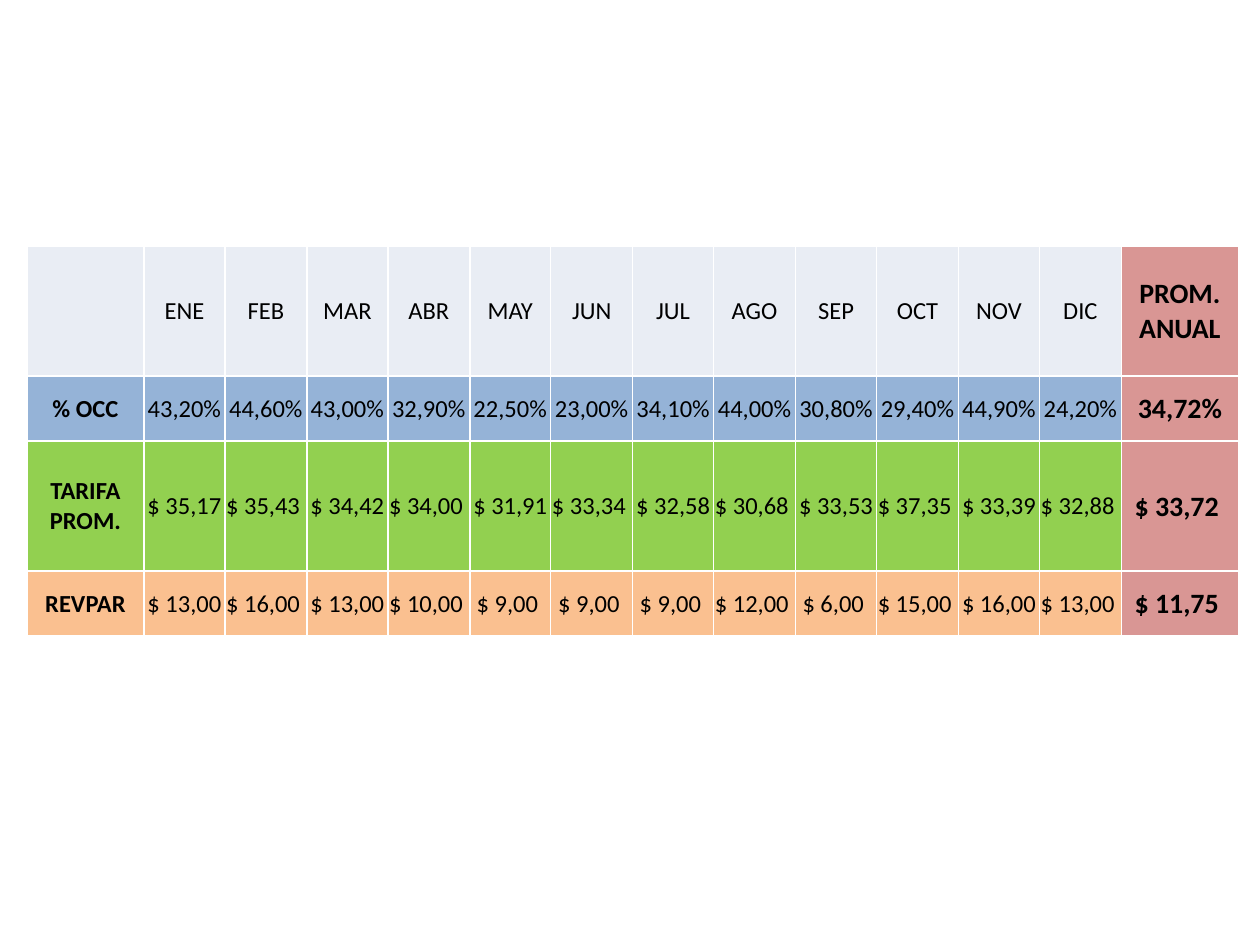
import dataclasses

import pptx
import pptx.dml.color
import pptx.enum.text
import pptx.oxml
import pptx.oxml.ns
import pptx.util

PX = 914400 // 126


@dataclasses.dataclass(frozen=True)
class Theme:
    font: str = "Calibri"
    text: str = "000000"
    border: str = "FFFFFF"
    header: str = "E9EDF4"
    occupancy: str = "95B3D7"
    rate: str = "92D050"
    revpar: str = "FAC090"
    average: str = "D99694"
    body_size: int = 14
    average_size: int = 16
    border_width: int = 1


class SlideBuilder:
    def __init__(self, page, theme):
        self.page = page
        self.theme = theme

    def table(self, left, top, widths, heights, rows, fills):
        """Draw rows of text; the last column holds the yearly averages."""
        frame = self.page.shapes.add_table(
            len(heights), len(widths), left * PX, top * PX,
            sum(widths) * PX, sum(heights) * PX)
        grid = frame.table
        for column, width in zip(grid.columns, widths):
            column.width = width * PX
        for line, height in zip(grid.rows, heights):
            line.height = height * PX
        last = len(widths) - 1
        for r, (values, fill) in enumerate(zip(rows, fills)):
            for c, text in enumerate(values):
                average = c == last
                self.cell(
                    grid.cell(r, c), text,
                    self.theme.average if average else fill,
                    self.theme.average_size if average else self.theme.body_size,
                    c in (0, last))

    def cell(self, cell, text, fill, size, bold):
        cell.margin_left = cell.margin_top = cell.margin_right = PX
        cell.margin_bottom = 0
        cell.vertical_anchor = pptx.enum.text.MSO_ANCHOR.MIDDLE
        self.borders(cell)
        cell.fill.solid()
        cell.fill.fore_color.rgb = pptx.dml.color.RGBColor.from_string(fill)
        para = cell.text_frame.paragraphs[0]
        para.text = text
        para.alignment = pptx.enum.text.PP_ALIGN.CENTER
        for span in para.runs:
            span.font.name = self.theme.font
            span.font.size = pptx.util.Pt(size)
            span.font.bold = bold
            span.font.color.rgb = pptx.dml.color.RGBColor.from_string(self.theme.text)

    def borders(self, cell):
        properties = cell._tc.get_or_add_tcPr()
        width = pptx.util.Pt(self.theme.border_width)
        for side in ("lnL", "lnR", "lnT", "lnB"):
            properties.append(pptx.oxml.parse_xml(
                f'<a:{side} {pptx.oxml.ns.nsdecls("a")} w="{width}"><a:solidFill>'
                f'<a:srgbClr val="{self.theme.border}"/></a:solidFill></a:{side}>'))


def even_widths(total, count):
    """Split a length into whole parts whose sum is exact."""
    edges = [i * total // count for i in range(count + 1)]
    return [end - start for start, end in zip(edges, edges[1:])]


def percents(values):
    return [f"{value}%" for value in values.split()]


def dollars(values):
    """Format as accounting amounts, which end in a space."""
    return [f"$ {value} " for value in values.split()]


def main():
    deck = pptx.Presentation()
    deck.slide_width = 1260 * PX
    deck.slide_height = 945 * PX
    theme = Theme()
    blank_layout = deck.slide_layouts[6]
    slide = SlideBuilder(deck.slides.add_slide(blank_layout), theme)

    months = "ENE FEB MAR ABR MAY JUN JUL AGO SEP OCT NOV DIC".split()
    rows = [
        ["", *months, "PROM. ANUAL"],
        ["% OCC", *percents("43,20 44,60 43,00 32,90 22,50 23,00 34,10 "
                            "44,00 30,80 29,40 44,90 24,20 34,72")],
        ["TARIFA PROM.", *dollars("35,17 35,43 34,42 34,00 31,91 33,34 32,58 "
                                  "30,68 33,53 37,35 33,39 32,88 33,72")],
        ["REVPAR", *dollars("13,00 16,00 13,00 10,00 9,00 9,00 9,00 "
                            "12,00 6,00 15,00 16,00 13,00 11,75")],
    ]
    slide.table(
        27, 246,
        widths=[117, *even_widths(978, len(months)), 117],
        heights=[130, 65, 130, 65],
        rows=rows,
        fills=[theme.header, theme.occupancy, theme.rate, theme.revpar])
    deck.save("out.pptx")


if __name__ == "__main__":
    main()
